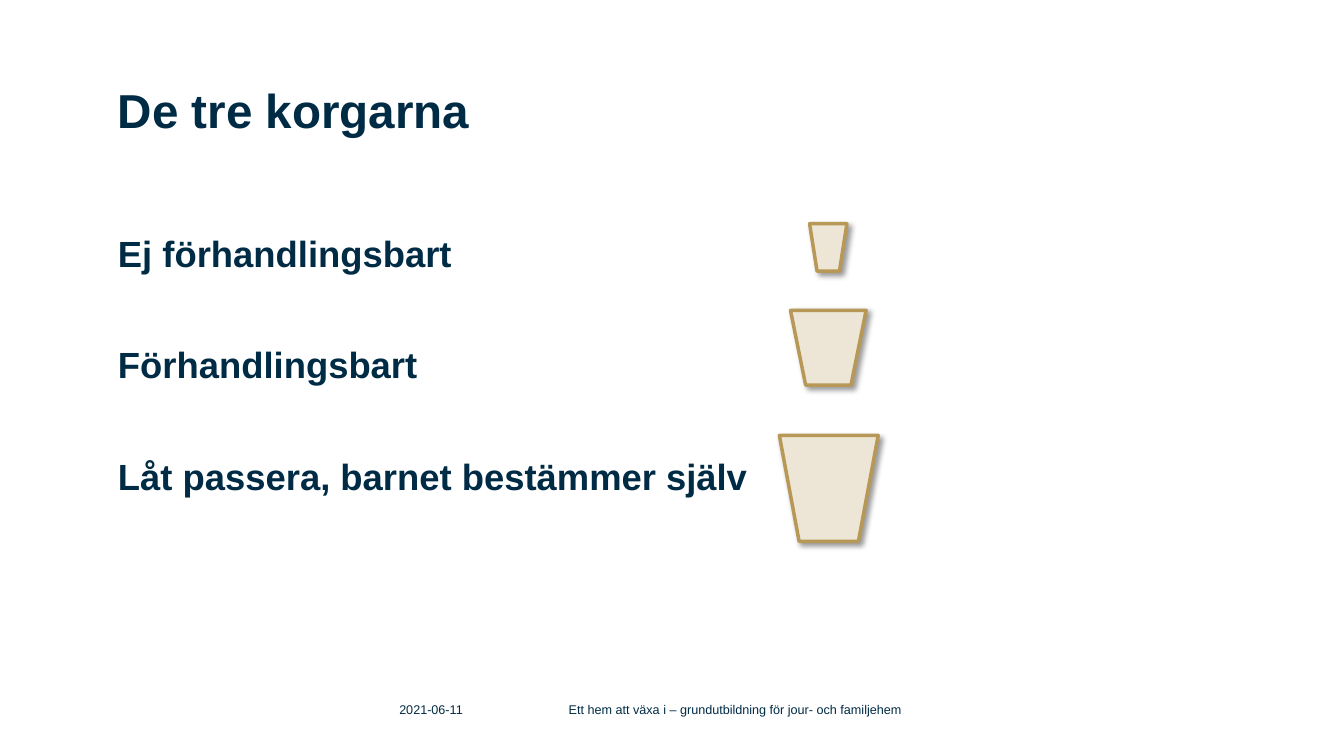
"""Build the slide about the three baskets."""
from lxml.etree import SubElement
from pptx import Presentation
from pptx.dml.color import RGBColor
from pptx.enum.shapes import MSO_SHAPE as Preset
from pptx.enum.text import MSO_ANCHOR as Anchor, MSO_AUTO_SIZE as AutoSize, PP_ALIGN as Align
from pptx.oxml.ns import qn
from pptx.util import Inches, Pt

COLORS = {"text": "002B45", "basket": "EDE5D5", "rim": "B89856", "shadow": "000000"}
FONT = "Arial"
RULES = ["Ej förhandlingsbart", "Förhandlingsbart", "Låt passera, barnet bestämmer själv"]
BASKETS = [(7.73, 4.32, 0.98, 1.05), (7.84, 3.08, 0.75, 0.74), (8.03, 2.22, 0.37, 0.47)]
FOOTER = [("2021-06-11", (3.96, 6.89, 1.68, 0.29)),
          ("Ett hem att växa i – grundutbildning för jour- och familjehem",
           (5.64, 6.89, 4.22, 0.29))]


def color(name):
    return RGBColor.from_string(COLORS[name])


def set_up_frame(frame, anchor, top_inset=0):
    frame.word_wrap = True
    frame.auto_size = AutoSize.NONE
    frame.vertical_anchor = anchor
    frame.margin_left = frame.margin_right = frame.margin_bottom = 0
    frame.margin_top = Inches(top_inset)


def write_line(paragraph, text, size, bold=False, space_before=0):
    paragraph.alignment = Align.LEFT
    paragraph.line_spacing = 1.0
    paragraph.space_before = Pt(space_before)
    run = paragraph.add_run()
    run.text = text
    run.font.name = FONT
    run.font.size = Pt(size)
    run.font.bold = bold
    run.font.color.rgb = color("text")


def place(shape, box):
    shape.left, shape.top, shape.width, shape.height = map(Inches, box)


def fill_title(title):
    place(title, (1.17, 0.75, 10.14, 1.42))
    set_up_frame(title.text_frame, Anchor.TOP, 0.05)
    write_line(title.text_frame.paragraphs[0], "De tre korgarna", 34, bold=True)


def fill_rules(body):
    place(body, (1.17, 2.25, 10.15, 4.06))
    frame = body.text_frame
    set_up_frame(frame, Anchor.TOP, 0.04)
    for index, rule in enumerate(RULES):
        paragraph = frame.add_paragraph() if index else frame.paragraphs[0]
        properties = paragraph._p.get_or_add_pPr()
        properties.set("marL", "0")
        properties.set("indent", "0")
        SubElement(properties, qn("a:buNone"))
        write_line(paragraph, rule, 26, bold=True, space_before=48.5 if index else 0)


def add_footer(slide, text, box):
    frame = slide.shapes.add_textbox(*map(Inches, box)).text_frame
    set_up_frame(frame, Anchor.MIDDLE)
    write_line(frame.paragraphs[0], text, 9)


def add_basket(slide, box):
    basket = slide.shapes.add_shape(Preset.FLOWCHART_MANUAL_OPERATION, *map(Inches, box))
    basket.fill.solid()
    basket.fill.fore_color.rgb = color("basket")
    basket.line.color.rgb = color("rim")
    basket.line.width = Pt(2.5)
    basket.shadow.inherit = False
    effects = basket._element.spPr.find(qn("a:effectLst"))
    shadow = SubElement(effects, qn("a:outerShdw"), blurRad=str(Pt(4)), dist=str(Pt(3)),
                        dir=str(45 * 60000), algn="tl", rotWithShape="0")
    tint = SubElement(shadow, qn("a:srgbClr"), val=COLORS["shadow"])
    SubElement(tint, qn("a:alpha"), val="40000")


def main():
    deck = Presentation()
    deck.slide_width, deck.slide_height = Inches(13.33), Inches(7.5)
    slide = deck.slides.add_slide(deck.slide_layouts[1])
    fill_title(slide.shapes.title)
    fill_rules(slide.placeholders[1])
    for text, box in FOOTER:
        add_footer(slide, text, box)
    for box in BASKETS:
        add_basket(slide, box)
    deck.save("out.pptx")


if __name__ == "__main__":
    main()
